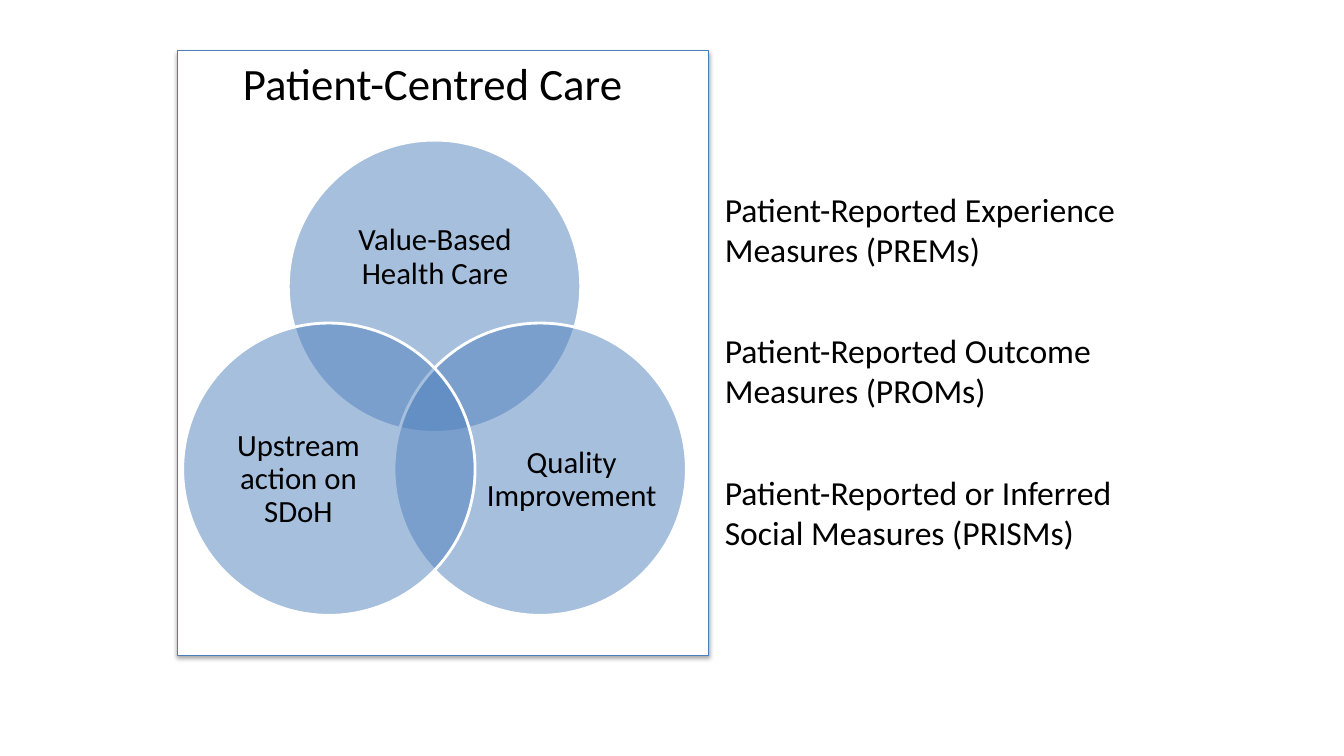
from dataclasses import dataclass
from math import cos, radians, sin

from lxml.etree import SubElement
from pptx import Presentation
from pptx.dml.color import RGBColor
from pptx.enum.shapes import MSO_SHAPE
from pptx.enum.text import MSO_ANCHOR, MSO_AUTO_SIZE, PP_ALIGN
from pptx.oxml.ns import qn
from pptx.shapes.autoshape import Shape
from pptx.shapes.shapetree import GroupShapes
from pptx.slide import Slide
from pptx.util import Inches, Pt

FONT = "Calibri"
BLACK, WHITE, BLUE, EDGE = "000000", "FFFFFF", "4F81BD", "4B7EBC"
VENN_X, VENN_Y = 4.31, 4.05
VENN_RADIUS, CIRCLE_RADIUS = 1.21, 1.45
MEASURE_X, MEASURE_Y, MEASURE_STEP = 7.09, 1.82, 1.405


@dataclass(frozen=True)
class Box:
    x: float
    y: float
    w: float
    h: float

    def lengths(self) -> tuple:
        return tuple(Inches(v) for v in (self.x, self.y, self.w, self.h))


@dataclass(frozen=True)
class Circle:
    label: str
    angle: float
    label_box: Box


@dataclass(frozen=True)
class Measure:
    text: str
    width: float


CIRCLES = (
    Circle("Value-Based Health Care", -90, Box(3.25, 1.9, 2.13, 1.31)),
    Circle("Quality Improvement", 30, Box(4.8, 3.96, 1.74, 1.6)),
    Circle("Upstream action on SDoH", 150, Box(2.09, 3.96, 1.74, 1.6)),
)
MEASURES = (
    Measure("Patient-Reported Experience Measures (PREMs)", 4.35),
    Measure("Patient-Reported Outcome Measures (PROMs)", 4.35),
    Measure("Patient-Reported or Inferred Social Measures (PRISMs)", 4.18),
)
LABEL_FRAME = {
    "vertical_anchor": MSO_ANCHOR.MIDDLE,
    "margin_left": 0,
    "margin_top": 0,
    "margin_right": 0,
    "margin_bottom": 0,
    "word_wrap": True,
}
LABEL_PARAGRAPH = {"alignment": PP_ALIGN.CENTER, "line_spacing": 0.9}
MEASURE_FRAME = {"word_wrap": True, "auto_size": MSO_AUTO_SIZE.SHAPE_TO_FIT_TEXT}
TITLE_FRAME = {
    "vertical_anchor": MSO_ANCHOR.TOP,
    "word_wrap": False,
    "auto_size": MSO_AUTO_SIZE.SHAPE_TO_FIT_TEXT,
}
LEFT = {"alignment": PP_ALIGN.LEFT}


def rgb(value: str) -> RGBColor:
    return RGBColor.from_string(value)


def apply(target: object, values: dict) -> None:
    for name, value in values.items():
        setattr(target, name, value)


def write(sp: Shape, text: str, size: float, frame: dict, paragraph: dict) -> None:
    tf = sp.text_frame
    apply(tf, frame)
    p = tf.paragraphs[0]
    apply(p, paragraph)
    r = p.add_run()
    r.text = text
    apply(r.font, {"name": FONT, "size": Pt(size)})
    r.font.color.rgb = rgb(BLACK)


def add_outline(shapes: GroupShapes, kind: MSO_SHAPE, box: Box, fill: str,
                line: str, width: float) -> Shape:
    sp = shapes.add_shape(kind, *box.lengths())
    sp.shadow.inherit = False
    sp.fill.solid()
    sp.fill.fore_color.rgb = rgb(fill)
    sp.line.color.rgb = rgb(line)
    sp.line.width = Pt(width)
    return sp


def add_panel(s: Slide) -> None:
    sp = add_outline(s.shapes, MSO_SHAPE.RECTANGLE, Box(1.76, 0.5, 5.27, 6),
                     WHITE, EDGE, 0.75)
    effects = sp.element.spPr.find(qn("a:effectLst"))
    shadow = SubElement(effects, qn("a:outerShdw"), blurRad=str(Pt(3.1)),
                        dist=str(Pt(1.8)), dir="5400000", rotWithShape="0")
    color = SubElement(shadow, qn("a:srgbClr"), val=BLACK)
    SubElement(color, qn("a:alpha"), val="35000")


def add_circle(shapes: GroupShapes, circle: Circle) -> None:
    angle = radians(circle.angle)
    x = VENN_X + VENN_RADIUS * cos(angle) - CIRCLE_RADIUS
    y = VENN_Y + VENN_RADIUS * sin(angle) - CIRCLE_RADIUS
    box = Box(x, y, 2 * CIRCLE_RADIUS, 2 * CIRCLE_RADIUS)
    sp = add_outline(shapes, MSO_SHAPE.OVAL, box, BLUE, WHITE, 2)
    color = sp.element.spPr.find(qn("a:solidFill")).find(qn("a:srgbClr"))
    SubElement(color, qn("a:alpha"), val="50000")
    label = shapes.add_textbox(*circle.label_box.lengths())
    write(label, circle.label, 22, LABEL_FRAME, LABEL_PARAGRAPH)


def add_measure(s: Slide, row: int, measure: Measure) -> None:
    box = Box(MEASURE_X, MEASURE_Y + row * MEASURE_STEP, measure.width, 0.91)
    sp = s.shapes.add_textbox(*box.lengths())
    write(sp, measure.text, 24, MEASURE_FRAME, LEFT)


def add_title(s: Slide) -> None:
    sp = s.shapes.title
    apply(sp, dict(zip(("left", "top", "width", "height"),
                       Box(2.31, 0.5, 4, 0.64).lengths())))
    write(sp, "Patient-Centred Care", 32, TITLE_FRAME, LEFT)
    sp.element.getparent().append(sp.element)


def main() -> None:
    prs = Presentation()
    prs.slide_width, prs.slide_height = Inches(13.33), Inches(7.5)
    s = prs.slides.add_slide(prs.slide_layouts[5])
    add_panel(s)
    venn = s.shapes.add_group_shape()
    for circle in CIRCLES:
        add_circle(venn.shapes, circle)
    for row, measure in enumerate(MEASURES):
        add_measure(s, row, measure)
    add_title(s)
    prs.save("out.pptx")


if __name__ == "__main__":
    main()
